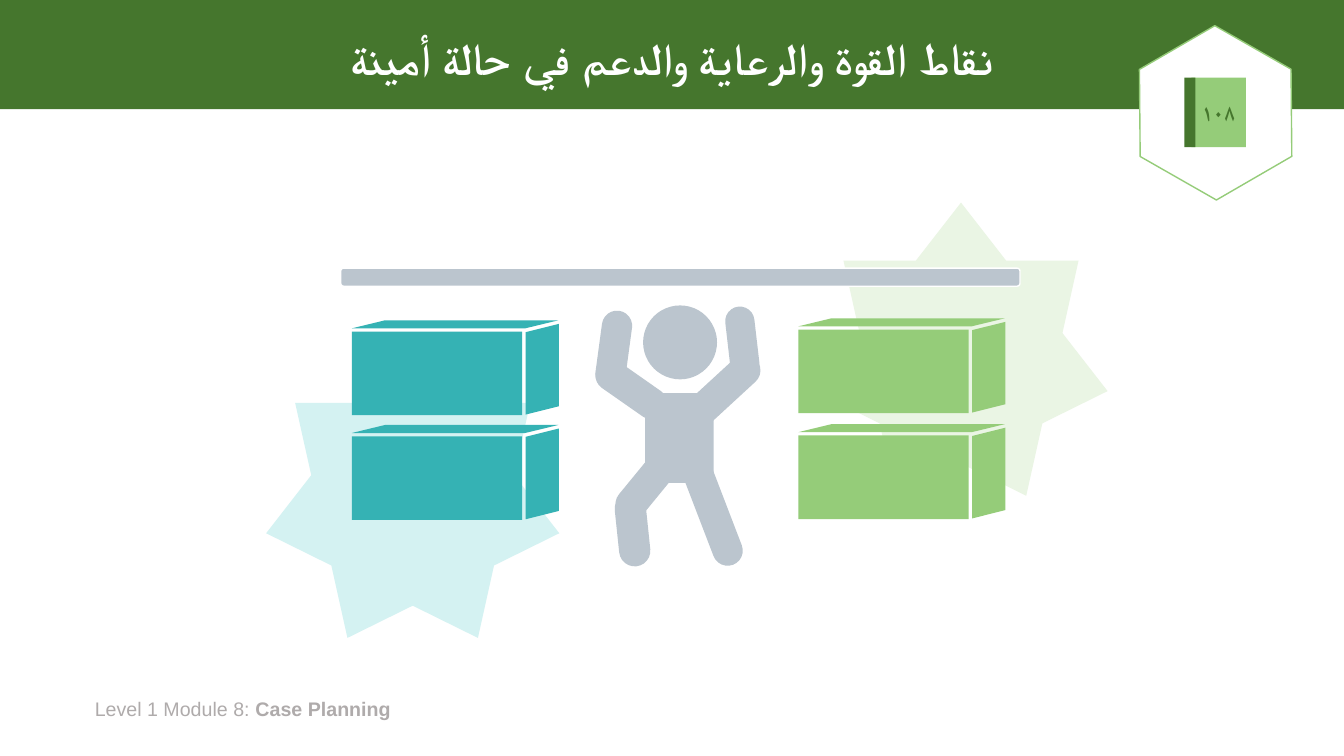
from dataclasses import dataclass

import pptx
import pptx.dml.color
import pptx.enum.shapes
import pptx.enum.text
import pptx.oxml.ns
import pptx.util

SHAPE = pptx.enum.shapes.MSO_SHAPE
ALIGN = pptx.enum.text.PP_ALIGN
ANCHOR = pptx.enum.text.MSO_ANCHOR
FIT = pptx.enum.text.MSO_AUTO_SIZE

# Square grid: 160 columns by 90 rows fill the slide
COLUMNS, ROWS = 160, 90
CELL = pptx.util.Inches(7.5) / ROWS


@dataclass(frozen=True)
class Theme:
    font: str = "Arial"
    title_size: int = 32
    page_size: int = 16
    footer_size: int = 14
    white: str = "FFFFFF"
    dark_green: str = "45762D"
    green: str = "95CC79"
    pale_green: str = "EAF5E4"
    teal: str = "35B2B4"
    pale_teal: str = "D4F2F2"
    grey: str = "BBC5CE"
    footer_grey: str = "AFABAB"


THEME = Theme()


@dataclass(frozen=True)
class Area:
    column: float
    row: float
    columns: float
    rows: float

    def emu(self) -> list[int]:
        return [round(n * CELL) for n in (self.column, self.row, self.columns, self.rows)]


@dataclass(frozen=True)
class Limb:
    area: Area
    rotation: float


@dataclass(frozen=True)
class Stack:
    column: float
    row: float
    pitch: float
    color: str


@dataclass(frozen=True)
class Star:
    area: Area
    color: str


STARS = (
    Star(Area(96.96, 24.12, 34.9, 34.9), THEME.pale_green),
    Star(Area(31.68, 41.04, 34.9, 34.9), THEME.pale_teal),
)
LIMBS = (
    Limb(Area(75.36, 52.32, 3.72, 10.32), 39.3),   # left thigh
    Limb(Area(83.04, 54.12, 3.6, 13.56), 159),     # right leg
    Limb(Area(73.44, 58.68, 3.72, 8.76), 174),     # left shin
    Limb(Area(86.64, 36.48, 3.48, 8.76), 353.4),   # right forearm
    Limb(Area(84.12, 41.04, 3.72, 11.04), 47.4),   # right upper arm
    Limb(Area(73.32, 41.52, 3.72, 9.72), 125),     # left upper arm
    Limb(Area(71.28, 36.96, 3.6, 9.24), 7.7),      # left forearm
)
STACKS = (
    Stack(41.88, 39.48, 12.46, THEME.teal),
    Stack(95.04, 39.24, 12.6, THEME.green),
)


def rgb(color: str) -> pptx.dml.color.RGBColor:
    return pptx.dml.color.RGBColor.from_string(color)


def draw(slide, kind, area: Area, color: str, *, outline: str | None = None,
         rotation: float = 0, adjust: tuple[float, ...] = (), mirrored: bool = False):
    form = slide.shapes.add_shape(kind, *area.emu())
    form.shadow.inherit = False
    form.fill.solid()
    form.fill.fore_color.rgb = rgb(color)
    if outline:
        form.line.color.rgb = rgb(outline)
        form.line.width = pptx.util.Pt(1)
    else:
        form.line.fill.background()
    form.rotation = rotation
    for index, value in enumerate(adjust):
        form.adjustments[index] = value
    if mirrored:
        form.element.spPr.find(pptx.oxml.ns.qn("a:xfrm")).set("flipH", "1")
    return form


def write(holder, text: str, *, size: float, color: str, bold: bool = False,
          align=ALIGN.LEFT, anchor=ANCHOR.TOP, rtl: bool = False, wrap: bool = True,
          spacing: float | None = None, fit=None) -> None:
    """Add a run of text to the first paragraph of a shape and format it."""
    frame = holder.text_frame
    frame.word_wrap = wrap
    frame.vertical_anchor = anchor
    if fit is not None:
        frame.auto_size = fit
    paragraph = frame.paragraphs[0]
    paragraph.alignment = align
    paragraph.line_spacing = spacing
    if rtl:
        paragraph._p.get_or_add_pPr().set("rtl", "1")
    run = paragraph.add_run()
    run.text = text
    run.font.name = THEME.font
    run.font.size = pptx.util.Pt(size)
    run.font.bold = bold
    run.font.color.rgb = rgb(color)
    script_font = run.font._element.makeelement(pptx.oxml.ns.qn("a:cs"), {"typeface": THEME.font})
    run.font._element.append(script_font)


def draw_frame(slide) -> None:
    draw(slide, SHAPE.RECTANGLE, Area(0, 0, COLUMNS, 13), THEME.dark_green)
    footer = slide.shapes.add_textbox(*Area(10.1, 82.4, 54.6, 4.1).emu())
    for text, bold in (("Level 1 Module 8: ", False), ("Case Planning", True)):
        write(footer, text, size=THEME.footer_size, color=THEME.footer_grey, bold=bold,
              fit=FIT.SHAPE_TO_FIT_TEXT)
    title = slide.shapes.add_textbox(*Area(11, 1.6, 138, 11.4).emu())
    write(title, "نقاط القوة والرعاية والدعم في حالة أمينة", size=THEME.title_size,
          color=THEME.white, bold=True, align=ALIGN.CENTER, anchor=ANCHOR.MIDDLE,
          rtl=True, spacing=0.9)


def draw_person(slide) -> None:
    draw(slide, SHAPE.ROUNDED_RECTANGLE, Area(40.56, 31.92, 80.88, 2.16), THEME.grey,
         outline=THEME.white)
    draw(slide, SHAPE.OVAL, Area(76.56, 36.36, 8.8, 8.8), THEME.grey)
    draw(slide, SHAPE.ROUNDED_RECTANGLE, Area(76.8, 46.8, 8.16, 10.68), THEME.grey, adjust=(0,))
    for limb in LIMBS:
        draw(slide, SHAPE.ROUNDED_RECTANGLE, limb.area, THEME.grey,
             rotation=limb.rotation, adjust=(0.5,))


def draw_block(slide, column: float, row: float, color: str) -> None:
    """Draw the front, side and top faces; the origin is the front's corner."""
    draw(slide, SHAPE.RECTANGLE, Area(column, row, 20.28, 9.96), color)
    draw(slide, SHAPE.PARALLELOGRAM, Area(column + 17.28, row + 2.5, 10.8, 3.96), color,
         rotation=270, mirrored=True)
    draw(slide, SHAPE.PARALLELOGRAM, Area(column, row - 1.35, 24.6, 0.96), color, adjust=(4.13,))


def draw_page_badge(slide) -> None:
    draw(slide, SHAPE.HEXAGON, Area(134.28, 4.44, 20.88, 18), THEME.white,
         outline=THEME.green, rotation=29.7, adjust=(0.29, 1.15))
    book = draw(slide, SHAPE.RECTANGLE, Area(141.84, 9.24, 6.48, 8.28), THEME.green)
    write(book, "١٠٨", size=THEME.page_size, color=THEME.dark_green, bold=True,
          align=ALIGN.CENTER, anchor=ANCHOR.MIDDLE, rtl=True, wrap=False)
    draw(slide, SHAPE.RECTANGLE, Area(141, 9.24, 1.32, 8.28), THEME.dark_green)


def main() -> None:
    deck = pptx.Presentation()
    deck.slide_width = round(COLUMNS * CELL)
    deck.slide_height = round(ROWS * CELL)
    slide = deck.slides.add_slide(deck.slide_layouts[6])
    draw_frame(slide)
    # Background stars, then the person holding the bar
    for star in STARS:
        draw(slide, SHAPE.STAR_7_POINT, star.area, star.color)
    draw_person(slide)
    # Supporting blocks, two levels per stack
    for level in range(2):
        for stack in STACKS:
            draw_block(slide, stack.column, stack.row + level * stack.pitch, stack.color)
    draw_page_badge(slide)
    deck.save("out.pptx")


if __name__ == "__main__":
    main()
